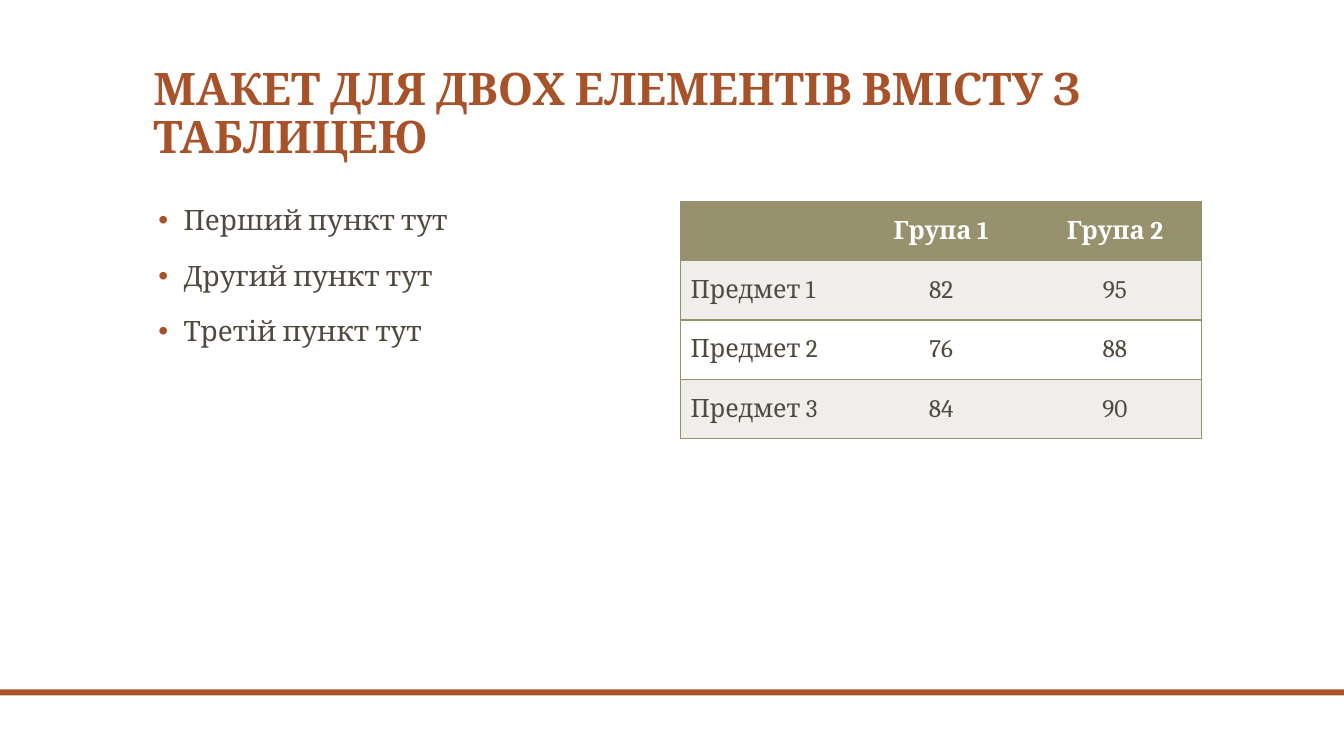
"""Build a slide with a bulleted list beside a small table of scores."""
from lxml import etree
from pptx import Presentation
from pptx.dml.color import RGBColor
from pptx.enum.shapes import MSO_SHAPE
from pptx.enum.text import MSO_ANCHOR, MSO_AUTO_SIZE, PP_ALIGN
from pptx.oxml.ns import qn
from pptx.util import Inches, Pt

RECTANGLE = MSO_SHAPE.RECTANGLE
MIDDLE, BOTTOM, TOP = MSO_ANCHOR.MIDDLE, MSO_ANCHOR.BOTTOM, MSO_ANCHOR.TOP
LEFT, CENTER = PP_ALIGN.LEFT, PP_ALIGN.CENTER
NO_AUTOFIT = MSO_AUTO_SIZE.NONE
RUST, BROWN, OLIVE, PALE, WHITE = "A85229", "514A40", "98916E", "EFEEEB", "FFFFFF"
FONT = "Cambria"
TITLE = "МАКЕТ ДЛЯ ДВОХ ЕЛЕМЕНТІВ ВМІСТУ З ТАБЛИЦЕЮ"
POINTS = ["Перший пункт тут", "Другий пункт тут", "Третій пункт тут"]
ROWS = [
    ["", "Група 1", "Група 2"],
    ["Предмет 1", "82", "95"],
    ["Предмет 2", "76", "88"],
    ["Предмет 3", "84", "90"],
]


def color(value):
    return RGBColor.from_string(value)


def add_run(paragraph, text, size, value, bold=False):
    run = paragraph.add_run()
    run.text = text
    run.font.name = FONT
    run.font.size = Pt(size)
    run.font.bold = bold
    run.font.color.rgb = color(value)


presentation = Presentation()
presentation.slide_width = Inches(13.33)
presentation.slide_height = Inches(7.5)
slide = presentation.slides.add_slide(presentation.slide_layouts[1])
slide.background.fill.solid()
slide.background.fill.fore_color.rgb = color(WHITE)

title = slide.shapes.title
body = slide.placeholders[1]
for shape, top, width, height, anchor in [
    (title, 0.42, 10.5, 1.25, BOTTOM),
    (body, 2, 5.17, 4.5, TOP),
]:
    shape.left, shape.top = Inches(1.42), Inches(top)
    shape.width, shape.height = Inches(width), Inches(height)
    shape.text_frame.word_wrap = True
    shape.text_frame.auto_size = NO_AUTOFIT
    shape.text_frame.vertical_anchor = anchor

heading = title.text_frame.paragraphs[0]
heading.alignment = LEFT
heading.line_spacing = 0.9
add_run(heading, TITLE, 32, RUST, bold=True)

for index, point in enumerate(POINTS):
    frame = body.text_frame
    paragraph = frame.add_paragraph() if index else frame.paragraphs[0]
    paragraph.line_spacing = 0.9
    paragraph.space_before = Pt(18 if index else 0)
    properties = paragraph._p.get_or_add_pPr()
    properties.set("marL", str(Inches(0.3)))
    properties.set("indent", str(Inches(-0.25)))
    bullet_color = etree.SubElement(properties, qn("a:buClr"))
    etree.SubElement(bullet_color, qn("a:srgbClr"), val=RUST)
    etree.SubElement(properties, qn("a:buChar"), char="•")
    add_run(paragraph, point, 20, BROWN)

stripe = slide.shapes.add_shape(
    RECTANGLE, 0, Inches(6.84), presentation.slide_width, Inches(0.06))
stripe.shadow.inherit = False
stripe.fill.solid()
stripe.fill.fore_color.rgb = color(RUST)
stripe.line.fill.background()

table = slide.shapes.add_table(
    len(ROWS), len(ROWS[0]), Inches(6.75), Inches(2), Inches(5.17), Inches(2.35)).table
last_column = len(ROWS[0]) - 1
for row_index, row in enumerate(ROWS):
    header = row_index == 0
    row_fill = OLIVE if header else PALE if row_index % 2 else WHITE
    for column_index, text in enumerate(row):
        cell = table.cell(row_index, column_index)
        cell.vertical_anchor = MIDDLE
        edges = {
            "a:lnL": column_index == 0,
            "a:lnR": column_index == last_column,
            "a:lnT": True,
            "a:lnB": True,
        }
        for tag, visible in edges.items():
            edge = etree.SubElement(
                cell._tc.get_or_add_tcPr(), qn(tag), w=str(Pt(1) if visible else 0))
            if visible:
                edge_fill = etree.SubElement(edge, qn("a:solidFill"))
                etree.SubElement(edge_fill, qn("a:srgbClr"), val=OLIVE)
            else:
                etree.SubElement(edge, qn("a:noFill"))
        cell.fill.solid()
        cell.fill.fore_color.rgb = color(row_fill)
        if text:
            paragraph = cell.text_frame.paragraphs[0]
            paragraph.alignment = CENTER if column_index else LEFT
            add_run(paragraph, text, 18, WHITE if header else BROWN, bold=header)

presentation.save("out.pptx")
